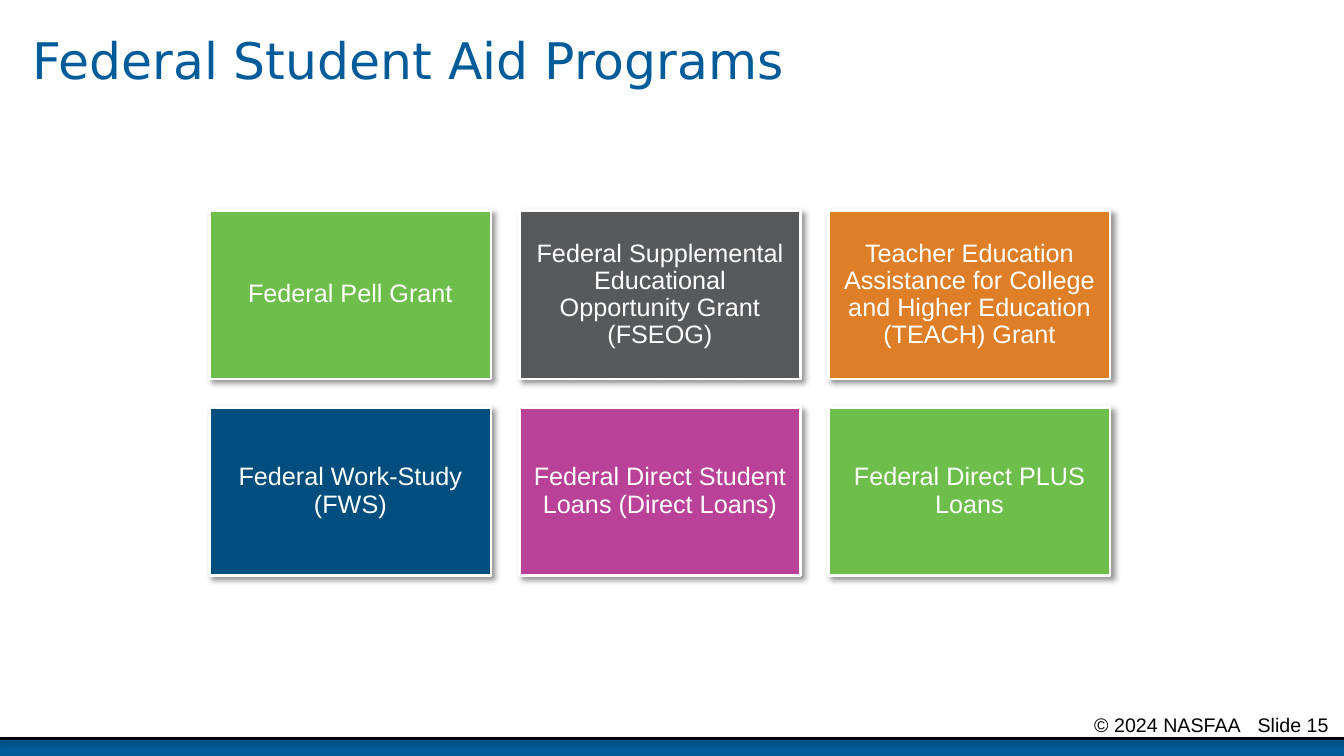
import pptx
import pptx.util
import pptx.dml.color
import pptx.enum.shapes
import pptx.enum.text
import pptx.oxml
import pptx.oxml.ns

Inches = pptx.util.Inches
Pt = pptx.util.Pt
RGBColor = pptx.dml.color.RGBColor
ALIGN = pptx.enum.text.PP_ALIGN
ANCHOR = pptx.enum.text.MSO_ANCHOR
RECTANGLE = pptx.enum.shapes.MSO_SHAPE.RECTANGLE

BLUE = RGBColor(0x00, 0x5B, 0x99)
NAVY = RGBColor(0x00, 0x4E, 0x7D)
GREEN = RGBColor(0x6D, 0xBE, 0x4B)
GRAY = RGBColor(0x58, 0x59, 0x5B)
ORANGE = RGBColor(0xDE, 0x7E, 0x26)
MAGENTA = RGBColor(0xB9, 0x41, 0x97)
WHITE = RGBColor(0xFF, 0xFF, 0xFF)
BLACK = RGBColor(0x00, 0x00, 0x00)


def write(frame, text, size, color, font="Arial", align=ALIGN.LEFT,
          anchor=ANCHOR.MIDDLE, margin=0.1, spacing=0.9, right_tabs=()):
    frame.word_wrap = True
    frame.auto_size = pptx.enum.text.MSO_AUTO_SIZE.NONE
    frame.vertical_anchor = anchor
    frame.margin_left = frame.margin_right = Inches(margin)
    frame.margin_top = frame.margin_bottom = Inches(min(margin, 0.07))
    paragraph = frame.paragraphs[0]
    paragraph.alignment = align
    paragraph.line_spacing = spacing
    if right_tabs:
        tabs = pptx.oxml.parse_xml(
            f'<a:tabLst {pptx.oxml.ns.nsdecls("a")}>'
            + "".join(f'<a:tab pos="{Inches(stop)}" algn="r"/>' for stop in right_tabs)
            + "</a:tabLst>")
        paragraph._p.get_or_add_pPr().append(tabs)
    run = paragraph.add_run()
    run.text = text
    run.font.name = font
    run.font.size = Pt(size)
    run.font.color.rgb = color


def cast_shadow(item, opacity, blur, distance, angle):
    item._element.spPr.append(pptx.oxml.parse_xml(
        f'<a:effectLst {pptx.oxml.ns.nsdecls("a")}>'
        f'<a:outerShdw blurRad="{Pt(blur)}" dist="{Pt(distance)}" '
        f'dir="{angle * 60000}" algn="ctr" rotWithShape="0"><a:srgbClr val="000000">'
        f'<a:alpha val="{opacity * 1000}"/></a:srgbClr></a:outerShdw></a:effectLst>'))


deck = pptx.Presentation()
deck.slide_width = Inches(13.33)
deck.slide_height = Inches(7.5)
slide = deck.slides.add_slide(deck.slide_layouts[5])
shapes = slide.shapes

footer_top = Inches(7.33)
footer_band = shapes.add_shape(RECTANGLE, 0, footer_top, deck.slide_width,
                               deck.slide_height - footer_top)
footer_band.shadow.inherit = False
footer_band.fill.solid()
footer_band.fill.fore_color.rgb = BLUE
footer_band.line.fill.background()

footer_rule = shapes.add_connector(pptx.enum.shapes.MSO_CONNECTOR.STRAIGHT,
                                   0, footer_top, deck.slide_width, footer_top)
footer_rule.line.color.rgb = BLACK
footer_rule.line.width = Pt(2)
cast_shadow(footer_rule, opacity=38, blur=3.1, distance=1.6, angle=90)

copyright_line = shapes.add_textbox(Inches(8.33), Inches(7), Inches(5), Inches(0.25))
write(copyright_line.text_frame, "\t© 2024 NASFAA\tSlide 15", size=14, color=BLACK,
      anchor=ANCHOR.TOP, spacing=1.0, right_tabs=(3.88, 4.75))

heading = shapes.title
heading.left, heading.top = Inches(0.22), 0
heading.width, heading.height = Inches(12.89), Inches(1.25)
write(heading.text_frame, "Federal Student Aid Programs", size=36, color=BLUE,
      font="DejaVu Sans")

programs = [
    ("Federal Pell Grant", GREEN),
    ("Federal Supplemental Educational Opportunity Grant (FSEOG)", GRAY),
    ("Teacher Education Assistance for College and Higher Education (TEACH) Grant", ORANGE),
    ("Federal Work-Study (FWS)", NAVY),
    ("Federal Direct Student Loans (Direct Loans)", MAGENTA),
    ("Federal Direct PLUS Loans", GREEN),
]
columns = 3
grid_left, grid_top = 2.08, 2.09
card_width, card_height, gap = 2.79, 1.67, 0.28

for index, (program, color) in enumerate(programs):
    row, column = divmod(index, columns)
    card = shapes.add_shape(RECTANGLE,
                            Inches(grid_left + column * (card_width + gap)),
                            Inches(grid_top + row * (card_height + gap)),
                            Inches(card_width), Inches(card_height))
    card.fill.solid()
    card.fill.fore_color.rgb = color
    card.line.color.rgb = WHITE
    card.line.width = Pt(2)
    cast_shadow(card, opacity=40, blur=4, distance=3, angle=45)
    write(card.text_frame, program, size=18, color=WHITE, align=ALIGN.CENTER, margin=0.07)

deck.save("out.pptx")
